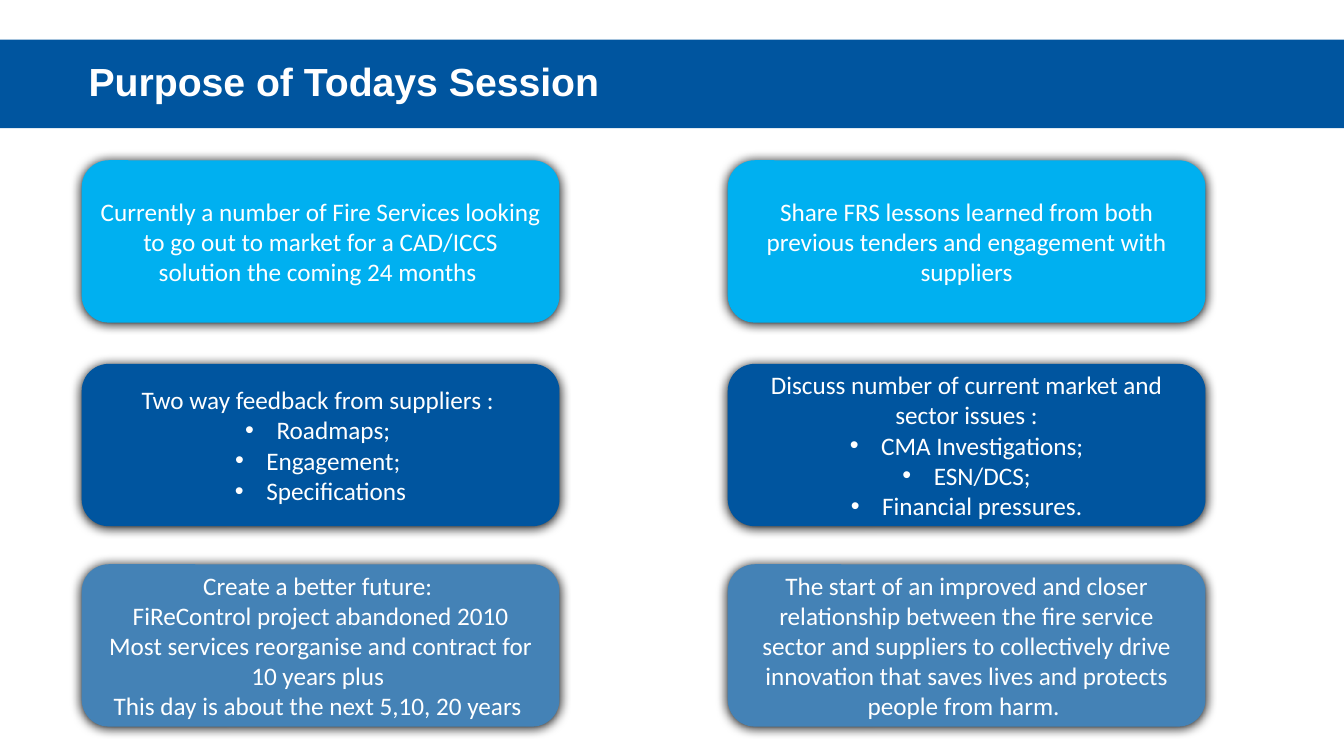
from lxml import etree
from pptx import Presentation
from pptx.dml.color import RGBColor
from pptx.enum.shapes import MSO_SHAPE
from pptx.enum.text import MSO_ANCHOR, MSO_AUTO_SIZE, PP_ALIGN
from pptx.oxml.ns import qn
from pptx.util import Cm, Pt

ROUND = MSO_SHAPE.ROUNDED_RECTANGLE
MIDDLE = MSO_ANCHOR.MIDDLE
LEFT, CENTER = PP_ALIGN.LEFT, PP_ALIGN.CENTER
FIXED = MSO_AUTO_SIZE.NONE

WHITE = RGBColor(0xFF, 0xFF, 0xFF)
NAVY = RGBColor(0x00, 0x55, 0x9F)
SKY = RGBColor(0x00, 0xB0, 0xF0)
STEEL = RGBColor(0x44, 0x82, 0xB6)

COLS = (2.06, 18.34)
BULLET = "• "

# Rows of cards: top, fill, then the lines of the left and right card
ROWS = [
    (4.04, SKY,
     ["Currently a number of Fire Services looking to go out to market "
      "for a CAD/ICCS solution the coming 24 months "],
     ["Share FRS lessons learned from both previous tenders and "
      "engagement with suppliers"]),
    (9.17, NAVY,
     ["Two way feedback from suppliers : ",
      "• Roadmaps; ", "• Engagement; ", "• Specifications"],
     ["Discuss number of current market and sector issues :",
      "• CMA Investigations;", "• ESN/DCS;", "• Financial pressures."]),
    (14.22, STEEL,
     ["Create a better future: ",
      "FiReControl project abandoned 2010",
      "Most services reorganise and contract for 10 years plus ",
      "This day is about the next 5,10, 20 years "],
     ["The start of an improved and closer relationship between the fire "
      "service sector and suppliers to collectively drive innovation that "
      "saves lives and protects people from harm. "]),
]


def add_shadow(shape):
    shape.shadow.inherit = False
    effects = shape._element.spPr.find(qn("a:effectLst"))
    outer = etree.SubElement(
        effects, qn("a:outerShdw"), blurRad=str(Pt(8.5)), dist=str(Pt(1)),
        dir="5400000", algn="ctr", rotWithShape="0")
    etree.SubElement(outer, qn("a:srgbClr"), val="000000")


def add_bullet(para):
    props = para._p.get_or_add_pPr()
    props.set("marL", str(Cm(0.79)))
    props.set("indent", str(-Cm(0.79)))
    etree.SubElement(props, qn("a:buFont"), typeface="Arial")
    etree.SubElement(props, qn("a:buChar"), char=BULLET.strip())


prs = Presentation()
prs.slide_width, prs.slide_height = Cm(33.87), Cm(19.05)
slide = prs.slides.add_slide(prs.slide_layouts[5])

# Title band
title = slide.shapes.title
title.left, title.top = Cm(0), Cm(1)
title.width, title.height = prs.slide_width, Cm(2.23)
title.fill.solid()
title.fill.fore_color.rgb = NAVY
frame = title.text_frame
frame.text = "Purpose of Todays Session"
frame.auto_size = FIXED
frame.vertical_anchor = MIDDLE
para = frame.paragraphs[0]
para.alignment = LEFT
para.line_spacing = 0.9
para._p.get_or_add_pPr().set("marL", str(Cm(1.98)))
font = para.runs[0].font
font.name, font.size, font.bold = "Arial", Pt(28), True
font.color.rgb = WHITE

# Cards
for top, fill, *cards in ROWS:
    for left, lines in zip(COLS, cards):
        card = slide.shapes.add_shape(
            ROUND, Cm(left), Cm(top), Cm(12.04), Cm(4.09))
        card.fill.solid()
        card.fill.fore_color.rgb = fill
        card.line.fill.background()
        add_shadow(card)
        frame = card.text_frame
        frame.word_wrap = True
        frame.vertical_anchor = MIDDLE
        frame.text = "\n".join(line.removeprefix(BULLET) for line in lines)
        for para, line in zip(frame.paragraphs, lines):
            para.alignment = CENTER
            if line.startswith(BULLET):
                add_bullet(para)
            font = para.runs[0].font
            font.name, font.size = "Calibri", Pt(18)
            font.color.rgb = WHITE

prs.save("out.pptx")
